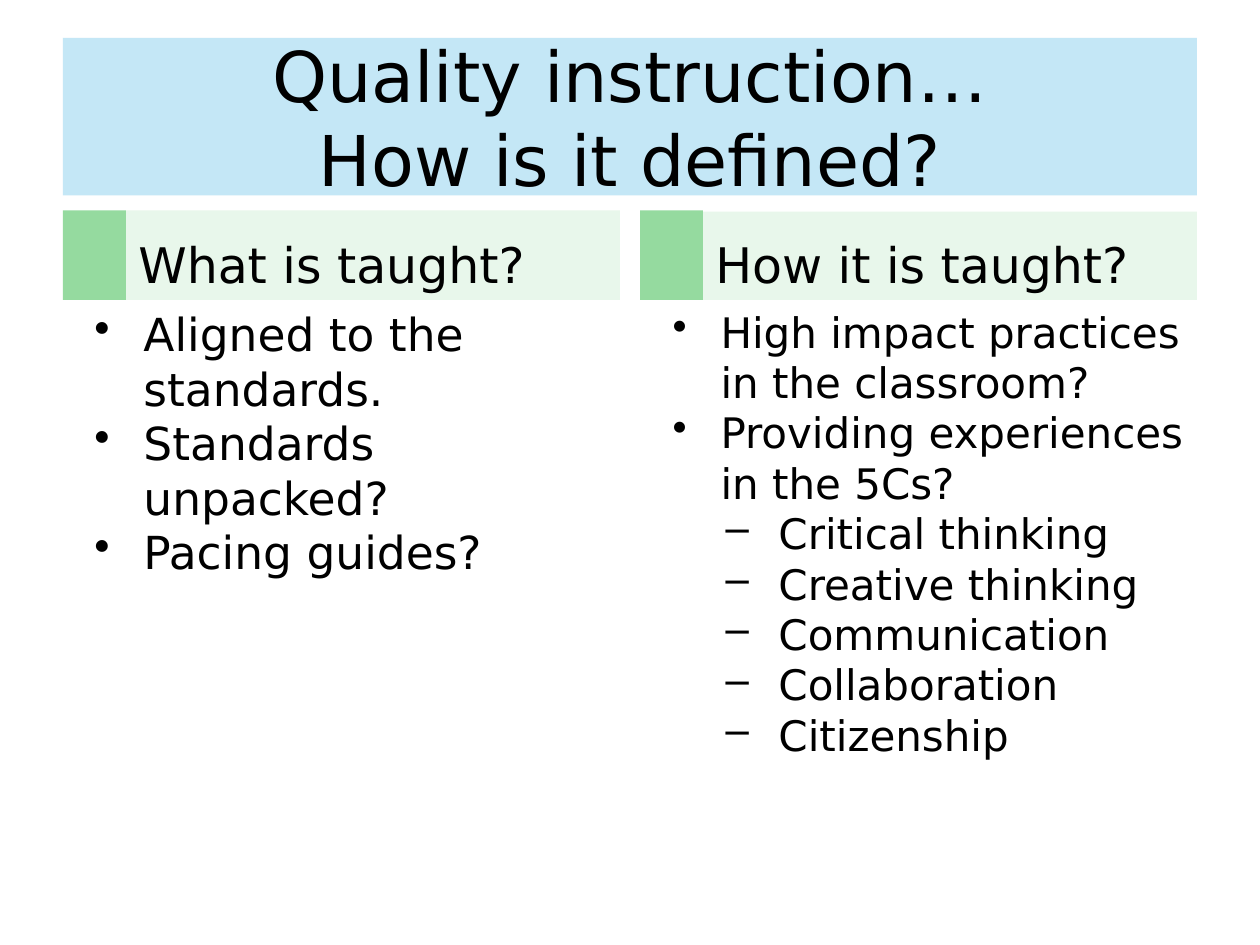
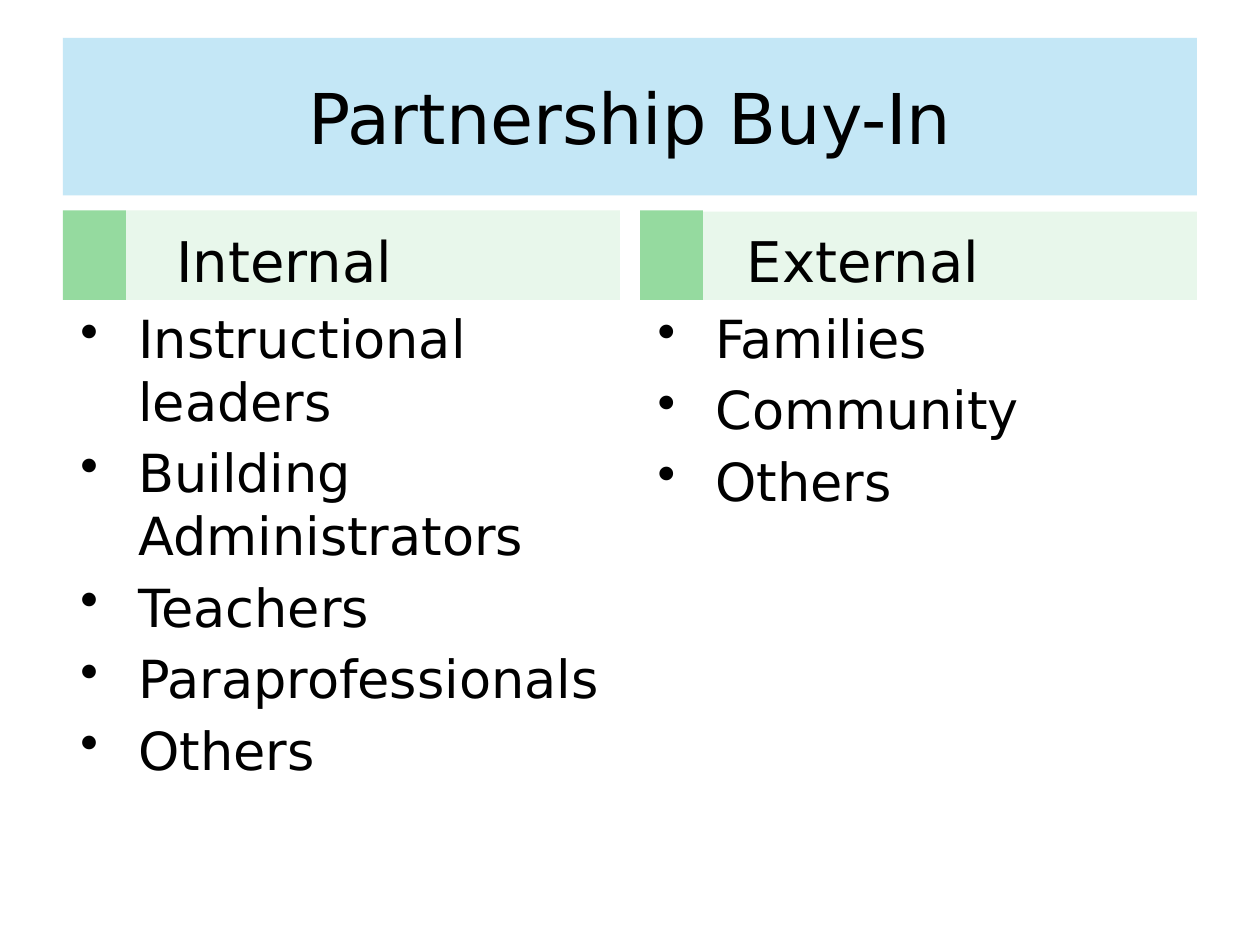
from lxml.etree import SubElement
from pptx import Presentation
from pptx.dml.color import RGBColor
from pptx.enum.shapes import MSO_SHAPE
from pptx.enum.text import MSO_ANCHOR, PP_ALIGN
from pptx.oxml.ns import qn
from pptx.util import Inches, Pt

COLUMN_LEFTS = (0.5, 5.08)
COLUMN_WIDTH = 4.42
MARKER_WIDTH = 0.5
HEADING_TOPS = (1.67, 1.68)
HEADING_BOTTOM = 2.38


def color(value):
    return RGBColor.from_string(value)


class SlideBuilder:
    font = "DejaVu Sans"
    ink = "000000"
    title_fill = "A9DCF2"
    marker_fill = "95DA9F"
    heading_fill = "E8F7EB"

    def __init__(self, deck):
        self.deck = deck
        self.page = None

    def start_page(self, title_lines):
        self.page = self.deck.slides.add_slide(self.deck.slide_layouts[6])
        for left in COLUMN_LEFTS:
            self.band(left, 1.67, MARKER_WIDTH, 0.71, self.marker_fill)
        title = self.band(0.5, 0.3, 9, 1.25, self.title_fill, alpha=68)
        frame = self.prepare(title, MSO_ANCHOR.MIDDLE)
        for index, line in enumerate(title_lines):
            para = self.add_line(frame, index, line, 40)
            para.alignment = PP_ALIGN.CENTER

    def band(self, left, top, width, height, fill, alpha=None):
        shape = self.page.shapes.add_shape(
            MSO_SHAPE.RECTANGLE, Inches(left), Inches(top), Inches(width), Inches(height))
        shape.shadow.inherit = False
        shape.fill.solid()
        shape.fill.fore_color.rgb = color(fill)
        shape.line.fill.background()
        if alpha is not None:
            swatch = shape._element.spPr.find(qn("a:solidFill"))[0]
            SubElement(swatch, qn("a:alpha"), val=str(alpha * 1000))
        return shape

    def prepare(self, box, anchor):
        frame = box.text_frame
        frame.word_wrap = True
        frame.vertical_anchor = anchor
        return frame

    def add_line(self, frame, index, text, size):
        para = frame.paragraphs[0] if index == 0 else frame.add_paragraph()
        para.alignment = PP_ALIGN.LEFT
        span = para.add_run()
        span.text = text
        span.font.name = self.font
        span.font.size = Pt(size)
        span.font.color.rgb = color(self.ink)
        return para

    def indent(self, para, margin, hanging):
        properties = para._p.get_or_add_pPr()
        properties.set("marL", str(Inches(margin)))
        properties.set("indent", str(-Inches(hanging)))
        return properties

    def heading(self, column, text, size, margin=0):
        left = COLUMN_LEFTS[column] + MARKER_WIDTH
        top = HEADING_TOPS[column]
        box = self.band(left, top, COLUMN_WIDTH - MARKER_WIDTH,
                        HEADING_BOTTOM - top, self.heading_fill)
        para = self.add_line(self.prepare(box, MSO_ANCHOR.BOTTOM), 0, text, size)
        self.indent(para, margin, 0)

    def bullets(self, column, items, size, indents, gap=0):
        box = self.page.shapes.add_textbox(
            Inches(COLUMN_LEFTS[column]), Inches(HEADING_BOTTOM),
            Inches(COLUMN_WIDTH), Inches(4.32))
        frame = self.prepare(box, MSO_ANCHOR.TOP)
        for index, (level, text) in enumerate(items):
            para = self.add_line(frame, index, text, size)
            para.level = level
            if index and gap:
                para.space_before = Pt(gap)
            properties = self.indent(para, *indents[level])
            bullet_color = SubElement(properties, qn("a:buClr"))
            SubElement(bullet_color, qn("a:srgbClr"), val=self.ink)
            SubElement(properties, qn("a:buChar"), char="•–"[level])


def at_level(level, *texts):
    return [(level, text) for text in texts]


def build_quality(builder):
    builder.start_page(["Quality instruction…", "How is it defined?"])
    builder.heading(0, "What is taught?", 28)
    standards = at_level(0, "Aligned to the standards.", "Standards unpacked?", "Pacing guides?")
    builder.bullets(0, standards, 26, [(0.54, 0.39)])
    builder.heading(1, "How it is taught?", 28)
    practices = at_level(0, "High impact practices in the classroom?",
                         "Providing experiences in the 5Cs?")
    five_cs = at_level(1, "Critical thinking", "Creative thinking", "Communication",
                       "Collaboration", "Citizenship")
    builder.bullets(1, practices + five_cs, 24, [(0.54, 0.38), (1, 0.42)])


def build_partnership(builder):
    builder.start_page(["Partnership Buy-In"])
    builder.heading(0, "Internal", 32, margin=0.3)
    builder.heading(1, "External", 32, margin=0.25)
    partners = (
        at_level(0, "Instructional leaders", "Building Administrators", "Teachers",
                 "Paraprofessionals", "Others"),
        at_level(0, "Families", "Community", "Others"),
    )
    for column, items in enumerate(partners):
        builder.bullets(column, items, 30, [(0.5, 0.46)], gap=4.8)


def main():
    deck = Presentation()
    deck.slide_width = Inches(10)
    deck.slide_height = Inches(7.5)
    builder = SlideBuilder(deck)
    build_quality(builder)
    build_partnership(builder)
    deck.save("out.pptx")


if __name__ == "__main__":
    main()
